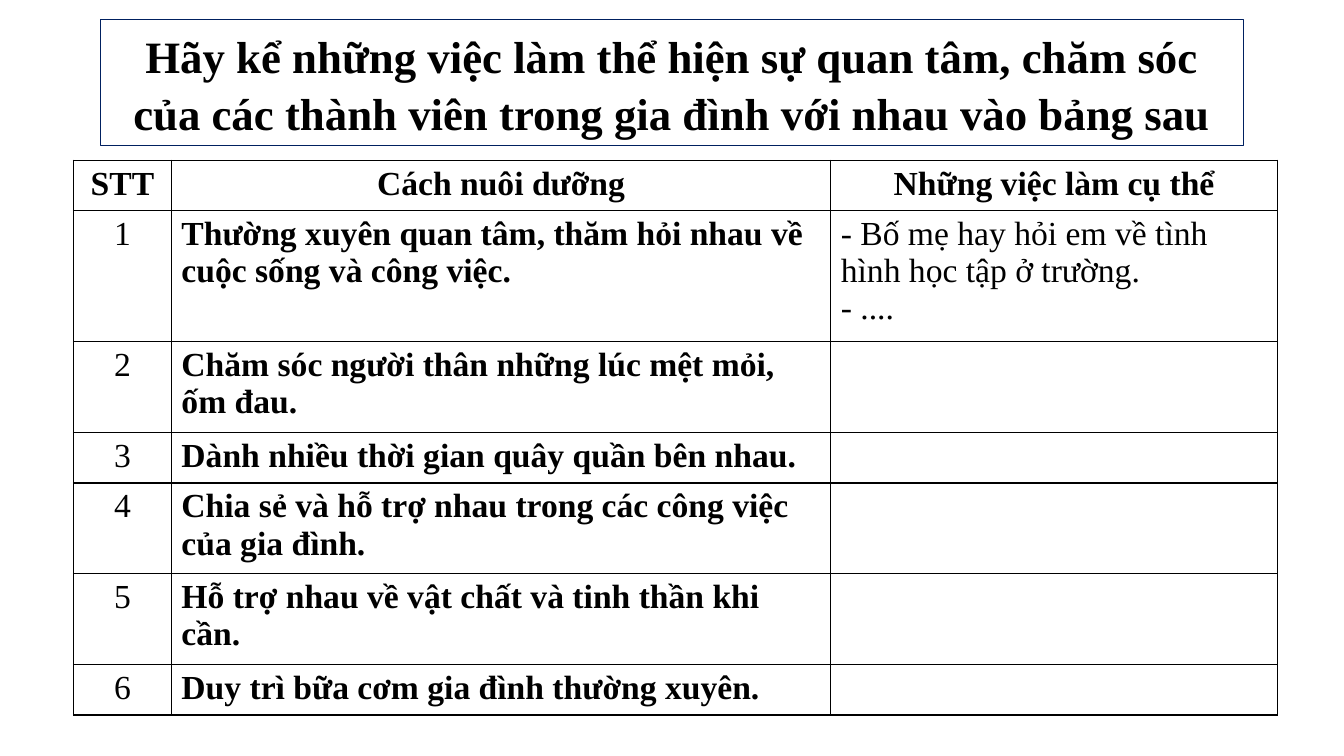
from lxml.etree import SubElement
from pptx import Presentation
from pptx.dml.color import RGBColor
from pptx.enum.text import MSO_ANCHOR, MSO_AUTO_SIZE, PP_ALIGN
from pptx.oxml.ns import qn
from pptx.util import Inches, Pt

COLORS = {"text": "000000", "grid": "000000", "frame": "002060"}
FONT = "Times New Roman"
COLUMN_WIDTHS = [0.97, 6.54, 4.43]
LINE_HEIGHT = 0.37
CELL_PADDING = 0.1

QUESTION = (
    "Hãy kể những việc làm thể hiện sự quan tâm, chăm sóc "
    "của các thành viên trong gia đình với nhau vào bảng sau"
)
HEADINGS = ["STT", "Cách nuôi dưỡng", "Những việc làm cụ thể"]
WAYS = [
    ("Thường xuyên quan tâm, thăm hỏi nhau về cuộc sống và công việc.", 3),
    ("Chăm sóc người thân những lúc mệt mỏi, ốm đau.", 2),
    ("Dành nhiều thời gian quây quần bên nhau.", 1),
    ("Chia sẻ và hỗ trợ nhau trong các công việc của gia đình.", 2),
    ("Hỗ trợ nhau về vật chất và tinh thần khi cần.", 2),
    ("Duy trì bữa cơm gia đình thường xuyên.", 1),
]
EXAMPLES = {1: ["- Bố mẹ hay hỏi em về tình hình học tập ở trường.", "- ...."]}


def add_text(paragraph, text, size, bold, align):
    paragraph.alignment = align
    run = paragraph.add_run()
    run.text = text
    run.font.name = FONT
    run.font.size = Pt(size)
    run.font.bold = bold
    run.font.color.rgb = RGBColor.from_string(COLORS["text"])


def add_borders(cell):
    properties = cell._tc.get_or_add_tcPr()
    for position, side in enumerate(("lnL", "lnR", "lnT", "lnB")):
        border = properties.makeelement(qn(f"a:{side}"), {"w": str(Pt(1))})
        fill = SubElement(border, qn("a:solidFill"))
        SubElement(fill, qn("a:srgbClr"), val=COLORS["grid"])
        properties.insert(position, border)


def fill_cell(cell, lines, bold, align):
    cell.fill.background()
    add_borders(cell)
    frame = cell.text_frame
    for number, line in enumerate(lines):
        paragraph = frame.add_paragraph() if number else frame.paragraphs[0]
        add_text(paragraph, line, 24, bold, align)


def add_question(slide):
    question = slide.shapes.title
    question.left, question.top = Inches(1), Inches(0.19)
    question.width, question.height = Inches(11.33), Inches(1.25)
    question.line.color.rgb = RGBColor.from_string(COLORS["frame"])
    question.line.width = Pt(0.75)
    frame = question.text_frame
    frame.word_wrap = True
    frame.auto_size = MSO_AUTO_SIZE.SHAPE_TO_FIT_TEXT
    frame.vertical_anchor = MSO_ANCHOR.MIDDLE
    paragraph = frame.paragraphs[0]
    paragraph.line_spacing = 1.07
    paragraph.space_after = Pt(10.7)
    add_text(paragraph, QUESTION, 32, True, PP_ALIGN.CENTER)


def add_ways_table(slide):
    line_counts = [1] + [count for _, count in WAYS]
    heights = [CELL_PADDING + LINE_HEIGHT * count for count in line_counts]
    table = slide.shapes.add_table(
        len(heights), len(COLUMN_WIDTHS), Inches(0.73), Inches(1.59),
        Inches(sum(COLUMN_WIDTHS)), Inches(sum(heights)),
    ).table
    table.horz_banding = False
    table.first_row = False
    for column, width in zip(table.columns, COLUMN_WIDTHS):
        column.width = Inches(width)
    for row, height in zip(table.rows, heights):
        row.height = Inches(height)
    for column, heading in enumerate(HEADINGS):
        fill_cell(table.cell(0, column), [heading], True, PP_ALIGN.CENTER)
    for number, (way, _) in enumerate(WAYS, 1):
        fill_cell(table.cell(number, 0), [str(number)], False, PP_ALIGN.CENTER)
        fill_cell(table.cell(number, 1), [way], True, PP_ALIGN.LEFT)
        fill_cell(table.cell(number, 2), EXAMPLES.get(number, []), False, PP_ALIGN.LEFT)


def main():
    deck = Presentation()
    deck.slide_width, deck.slide_height = Inches(13.33), Inches(7.5)
    slide = deck.slides.add_slide(deck.slide_layouts[5])
    add_question(slide)
    add_ways_table(slide)
    deck.save("out.pptx")


if __name__ == "__main__":
    main()
